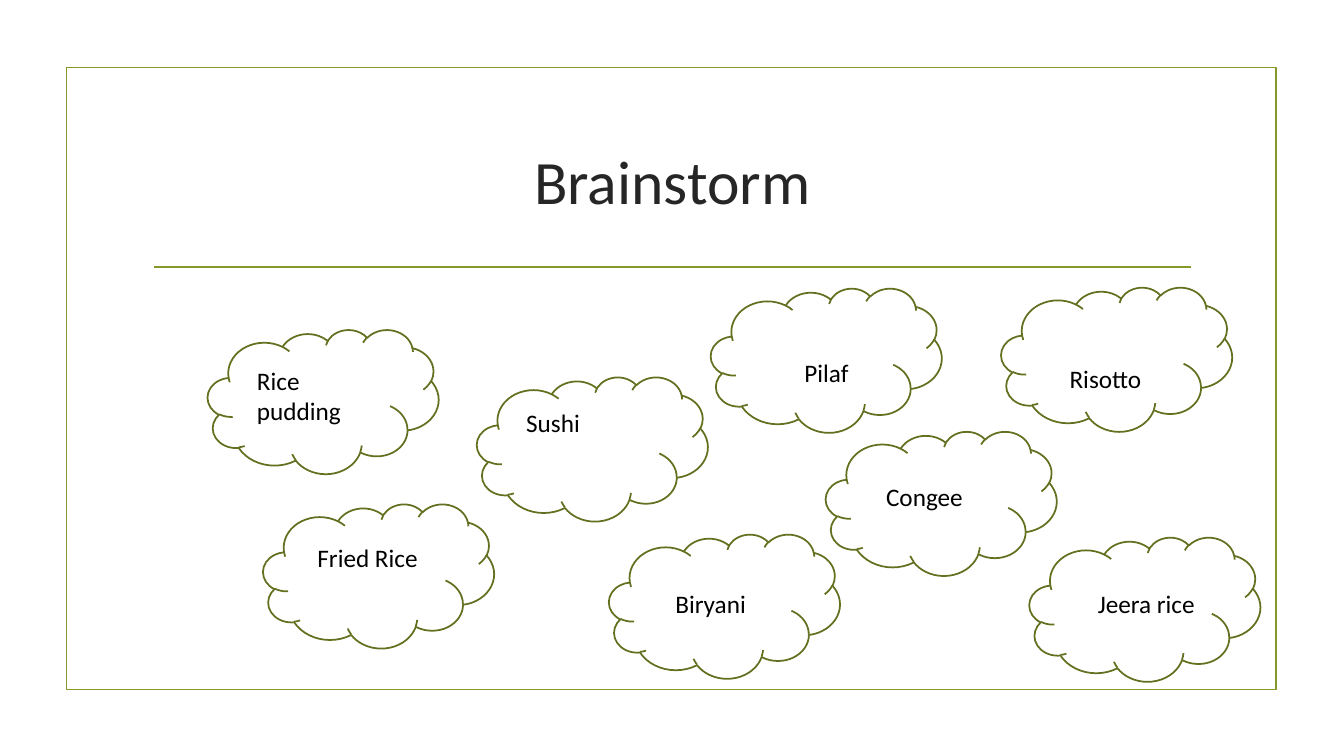
from pptx import Presentation
from pptx.dml.color import RGBColor
from pptx.enum.shapes import MSO_CONNECTOR, MSO_SHAPE
from pptx.enum.text import MSO_ANCHOR, MSO_AUTO_SIZE, PP_ALIGN
from pptx.oxml.ns import qn
from pptx.util import Emu, Pt
from lxml import etree

RECTANGLE, CLOUD = MSO_SHAPE.RECTANGLE, MSO_SHAPE.CLOUD
STRAIGHT = MSO_CONNECTOR.STRAIGHT
LEFT, CENTER = PP_ALIGN.LEFT, PP_ALIGN.CENTER
TOP, MIDDLE = MSO_ANCHOR.TOP, MSO_ANCHOR.MIDDLE
NO_FIT, GROW = MSO_AUTO_SIZE.NONE, MSO_AUTO_SIZE.SHAPE_TO_FIT_TEXT

EMU_PER_PX = 9144  # 100 px to the inch
TITLE_LAYOUT = 5
FONT = "Calibri"
FRAME_GREEN, CLOUD_GREEN = "83992A", "61711F"
TITLE_GRAY, BLACK = "262626", "000000"
CLOUD_SIZE = (229, 143)

# Each idea: text, cloud corner, label box, whether the label wraps
IDEAS = [
    ("Rice pudding", (206, 327), (245, 357, 130, 71), True),
    ("Fried Rice", (261, 500), (305, 533, 168, 40), True),
    ("Congee", (819, 428), (869, 473, 97, 40), False),
    ("Jeera rice", (1021, 533), (1079, 579, 124, 40), True),
    ("Risotto", (993, 285), (1051, 356, 92, 40), False),
    ("Pilaf", (705, 286), (788, 350, 64, 40), False),
    ("Biryani", (604, 530), (660, 579, 90, 40), False),
    ("Sushi", (473, 374), (512, 399, 138, 40), True),
]


def px(*lengths):
    return [Emu(length * EMU_PER_PX) for length in lengths]


def color(hex_string):
    return RGBColor.from_string(hex_string)


def set_line(shape, hex_string):
    shape.line.color.rgb = color(hex_string)
    shape.line.width = Pt(1.25)


def write_text(shape, text, size=18, ink=BLACK, align=LEFT, anchor=TOP,
               wrap=True, fit=GROW):
    frame = shape.text_frame
    frame.text = text
    frame.word_wrap = wrap
    frame.auto_size = fit
    frame.vertical_anchor = anchor
    paragraph = frame.paragraphs[0]
    paragraph.alignment = align
    font = paragraph.runs[0].font
    font.name = FONT
    font.size = Pt(size)
    font.color.rgb = color(ink)


def add_outline(slide, kind, box, hex_string):
    shape = slide.shapes.add_shape(kind, *px(*box))
    shape.shadow.inherit = False
    shape.fill.background()
    set_line(shape, hex_string)


def add_rule(slide, start, end):
    rule = slide.shapes.add_connector(STRAIGHT, *px(*start, *end))
    set_line(rule, FRAME_GREEN)
    etree.SubElement(rule._element.spPr, qn("a:effectLst"))


def add_label(slide, text, box, wrap):
    label = slide.shapes.add_textbox(*px(*box))
    write_text(label, text, wrap=wrap)


def place_title(slide, text, box):
    title = slide.shapes.title
    title.left, title.top, title.width, title.height = px(*box)
    write_text(title, text, size=44, ink=TITLE_GRAY, align=CENTER,
               anchor=MIDDLE, fit=NO_FIT)


def main():
    presentation = Presentation()
    presentation.slide_width, presentation.slide_height = px(1333, 750)
    slide = presentation.slides.add_slide(
        presentation.slide_layouts[TITLE_LAYOUT])

    # Frame, rule and title
    add_outline(slide, RECTANGLE, (66, 67, 1200, 617), FRAME_GREEN)
    add_rule(slide, (153, 265), (1181, 265))
    place_title(slide, "Brainstorm", (142, 107, 1050, 143))

    # Idea clouds with their labels
    for text, corner, label_box, wrap in IDEAS:
        add_outline(slide, CLOUD, corner + CLOUD_SIZE, CLOUD_GREEN)
        add_label(slide, text, label_box, wrap)

    presentation.save("out.pptx")


if __name__ == "__main__":
    main()
